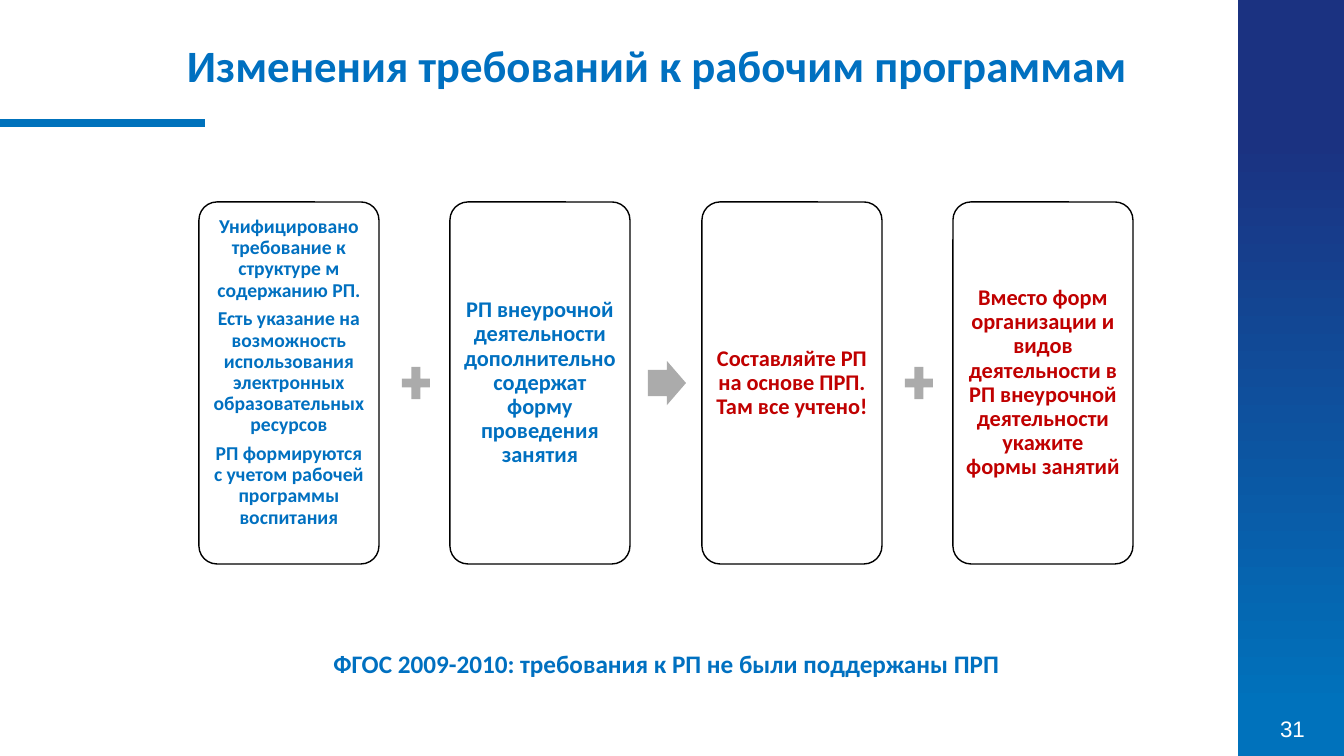
"""Build the slide on changes in the requirements for work programmes."""
from lxml.etree import SubElement
from pptx import Presentation
from pptx.dml.color import RGBColor
from pptx.enum.shapes import MSO_CONNECTOR, MSO_SHAPE
from pptx.enum.text import MSO_ANCHOR, MSO_AUTO_SIZE, PP_ALIGN
from pptx.oxml.ns import qn
from pptx.util import Pt

PX = 914400 / 100.8
COLORS = {
    "navy": "1B3281", "band": "0072BC", "blue": "0070C0", "red": "C00000",
    "gray": "ABABAB", "white": "FFFFFF", "black": "000000",
}


def px(*lengths):
    return [round(length * PX) for length in lengths]


def write(shape, texts, size, color, inset=(10, 5, 10, 5), font="Calibri", bold=True,
          align=PP_ALIGN.CENTER, anchor=MSO_ANCHOR.TOP, line_spacing=1.0):
    frame = shape.text_frame
    frame.word_wrap = True
    frame.auto_size = MSO_AUTO_SIZE.NONE
    frame.vertical_anchor = anchor
    frame.margin_left, frame.margin_top, frame.margin_right, frame.margin_bottom = px(*inset)
    for index, text in enumerate(texts):
        paragraph = frame.add_paragraph() if index else frame.paragraphs[0]
        paragraph.alignment = align
        paragraph.line_spacing = line_spacing
        paragraph.space_before = Pt(5.4 if index else 0)
        run = paragraph.add_run()
        run.text = text
        run.font.name = font
        run.font.size = Pt(size)
        run.font.bold = bold
        run.font.color.rgb = RGBColor.from_string(COLORS[color])


presentation = Presentation()
presentation.slide_width, presentation.slide_height = px(1344, 756)
slide = presentation.slides.add_slide(presentation.slide_layouts[5])
shapes = slide.shapes

side_band = shapes.add_shape(MSO_SHAPE.RECTANGLE, *px(1238, 0, 106, 756))
side_band.shadow.inherit = False
side_band.line.fill.background()
side_band.fill.gradient()
side_band.fill.gradient_angle = 270
for stop, (color, position) in zip(side_band.fill.gradient_stops, [("navy", 0.18), ("band", 0.94)]):
    stop.color.rgb = RGBColor.from_string(COLORS[color])
    stop.position = position

slide_number = shapes.add_textbox(*px(1252, 708, 81, 41))
write(slide_number, ["31"], 16, "white", font="Arial", bold=False, anchor=MSO_ANCHOR.MIDDLE)

title_rule = shapes.add_connector(MSO_CONNECTOR.STRAIGHT, *px(0, 123, 205, 123))
title_rule.line.color.rgb = RGBColor.from_string(COLORS["band"])
title_rule.line.width = Pt(6)
SubElement(title_rule._element.spPr, qn("a:effectLst"))

title = shapes.title
title.left, title.top, title.width, title.height = px(177, 33, 978, 64)
write(title, ["Изменения требований к рабочим программам"], 32, "blue", align=PP_ALIGN.LEFT)

footer = shapes.add_textbox(*px(155, 643, 1023, 40))
write(footer, ["ФГОС 2009-2010: требования к РП не были поддержаны ПРП"], 18, "blue")

cards = [
    (["Унифицировано требование к структуре м содержанию РП.",
      "Есть указание на возможность использования электронных образовательных ресурсов",
      "РП формируются с учетом рабочей программы воспитания"], 14, "blue", (6, 6, 6, 27)),
    (["РП внеурочной деятельности дополнительно содержат форму проведения занятия"],
     16, "blue", (7, 7, 7, 7)),
    (["Составляйте РП на основе ПРП. Там все учтено!"], 16, "red", (7, 7, 7, 7)),
    (["Вместо форм организации и видов деятельности в РП внеурочной деятельности "
      "укажите формы занятий"], 16, "red", (7, 7, 7, 7)),
]
signs = [MSO_SHAPE.MATH_PLUS, MSO_SHAPE.RIGHT_ARROW, MSO_SHAPE.MATH_PLUS]

for index, (texts, size, color, inset) in enumerate(cards):
    left = 199 + index * 503 // 2
    card = shapes.add_shape(MSO_SHAPE.ROUNDED_RECTANGLE, *px(left, 202, 180, 362))
    card.shadow.inherit = False
    card.adjustments[0] = 0.1
    card.fill.solid()
    card.fill.fore_color.rgb = RGBColor.from_string(COLORS["white"])
    card.line.color.rgb = RGBColor.from_string(COLORS["black"])
    card.line.width = Pt(1)
    write(card, texts, size, color, inset, anchor=MSO_ANCHOR.MIDDLE, line_spacing=0.9)
    if index < len(signs):
        sign = shapes.add_shape(signs[index], *px(left + 198, 361, 38, 44))
        sign.shadow.inherit = False
        sign.fill.solid()
        sign.fill.fore_color.rgb = RGBColor.from_string(COLORS["gray"])
        sign.line.fill.background()
        if signs[index] == MSO_SHAPE.RIGHT_ARROW:
            sign.adjustments[0] = 0.6

presentation.save("out.pptx")
